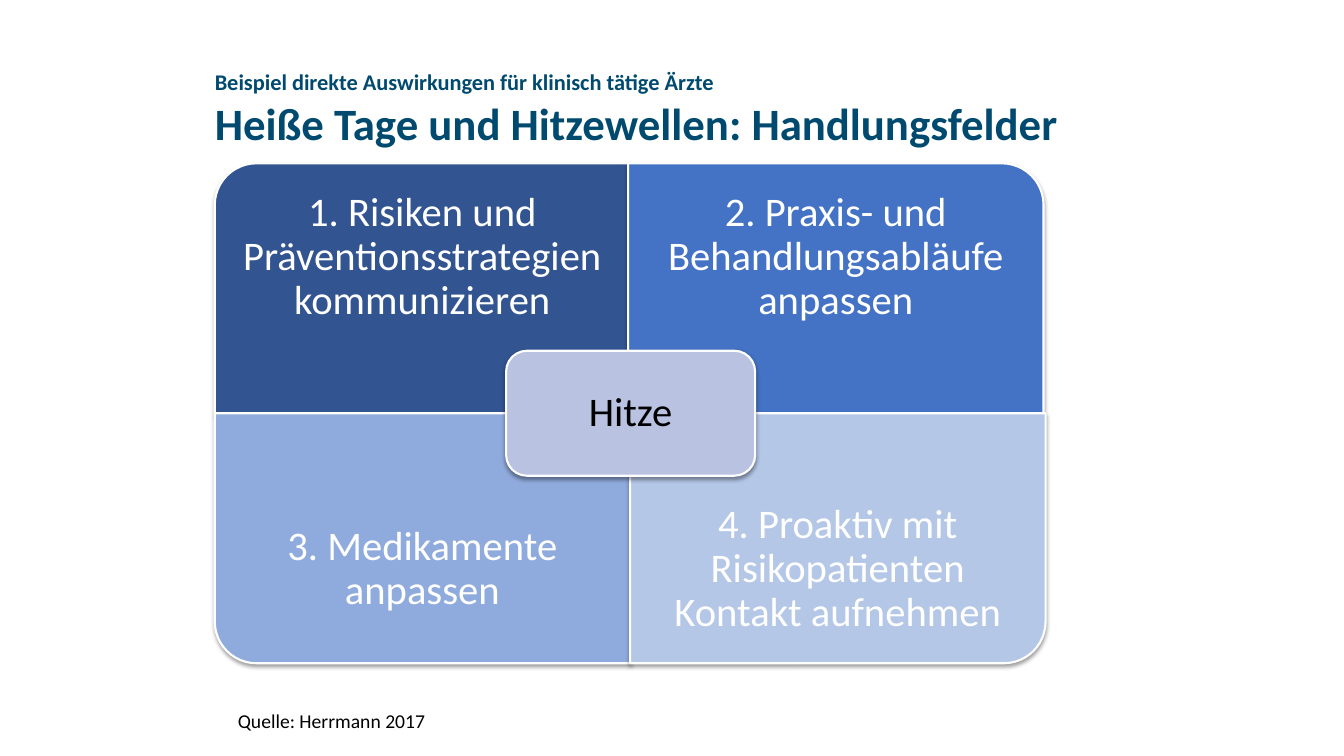
from lxml.etree import SubElement
from pptx import Presentation
from pptx.dml.color import RGBColor
from pptx.enum.shapes import MSO_SHAPE as Shape
from pptx.enum.text import MSO_ANCHOR as Anchor, MSO_AUTO_SIZE as Fit, PP_ALIGN as Align
from pptx.oxml.ns import qn
from pptx.util import Inches, Pt

COLORS = {
    "title": "004A6F", "white": "FFFFFF", "black": "000000", "center": "B9C2E1",
    "risks": "325491", "practice": "4472C4", "medication": "8FAADC", "contact": "B4C7E7",
}
LEFT, TOP = 2.13, 1.62      # corner of the matrix
COL, ROW = 4.12, 2.48       # size of one quadrant
TEXT_H = ROW * 0.75         # part of a quadrant left free by the center


def write(box, lines, color, inset=0.0, align=Align.LEFT, anchor=Anchor.TOP,
          bold=False, spacing=1.0, fit=Fit.NONE):
    """Fill a box with (text, size) lines, one paragraph each."""
    frame = box.text_frame
    frame.word_wrap, frame.auto_size, frame.vertical_anchor = True, fit, anchor
    frame.margin_left = frame.margin_right = Inches(inset)
    frame.margin_top = frame.margin_bottom = Inches(min(inset, 0.23))
    for index, (text, size) in enumerate(lines):
        para = frame.add_paragraph() if index else frame.paragraphs[0]
        para.alignment, para.line_spacing = align, spacing
        span = para.add_run()
        span.text = text
        span.font.name, span.font.size, span.font.bold = "Calibri", Pt(size), bold
        span.font.color.rgb = RGBColor.from_string(COLORS[color])


def add_panel(kind, left, top, width, height, color, rotation=0):
    """Add a filled panel with a white outline and a soft shadow below it."""
    panel = page.shapes.add_shape(kind, *map(Inches, (left, top, width, height)))
    panel.rotation = rotation
    panel.fill.solid()
    panel.fill.fore_color.rgb = RGBColor.from_string(COLORS[color])
    panel.line.color.rgb = RGBColor.from_string(COLORS["white"])
    panel.line.width = Pt(1.5)
    panel.shadow.inherit = False
    effects = panel._element.spPr.find(qn("a:effectLst"))
    shadow = SubElement(effects, qn("a:outerShdw"), blurRad=str(Pt(3.1)),
                        dist=str(Pt(1.6)), dir="5400000", rotWithShape="0")
    tone = SubElement(shadow, qn("a:srgbClr"), val=COLORS["black"])
    SubElement(tone, qn("a:alpha"), val="38000")


deck = Presentation()
deck.slide_width, deck.slide_height = Inches(13.33), Inches(7.5)
page = deck.slides.add_slide(deck.slide_layouts[5])

# Title with its kicker line
title = page.shapes.title
title.left, title.top, title.width, title.height = map(Inches, (LEFT, 0.68, 8.74, 0.81))
write(title, [("Beispiel direkte Auswirkungen für klinisch tätige Ärzte", 16),
              ("Heiße Tage und Hitzewellen: Handlungsfelder", 32)],
      "title", bold=True, fit=Fit.SHAPE_TO_FIT_TEXT)

# Quadrants: left edge, row, rotation of the rounded corner, color, text
quadrants = [
    (LEFT, 0, 270, "risks", "1. Risiken und Präventionsstrategien kommunizieren"),
    (6.23, 0, 0, "practice", "2. Praxis- und Behandlungsabläufe anpassen"),
    (LEFT, 1, 180, "medication", "3. Medikamente anpassen"),
    (LEFT + COL, 1, 90, "contact", "4. Proaktiv mit Risikopatienten Kontakt aufnehmen"),
]
for left, row, rotation, color, text in quadrants:
    top = TOP + row * ROW
    # A quarter turn swaps the sides around the same middle
    width, height = (ROW, COL) if rotation % 180 else (COL, ROW)
    add_panel(Shape.ROUND_1_RECTANGLE, left + (COL - width) / 2, top + (ROW - height) / 2,
              width, height, color, rotation)
    text_top = top + row * (ROW - TEXT_H)
    box = page.shapes.add_textbox(*map(Inches, (left, text_top, COL, TEXT_H)))
    write(box, [(text, 29)], "white", inset=0.23, align=Align.CENTER,
          anchor=Anchor.MIDDLE, spacing=0.9)

# Center, half a row high
center_w, center_h, pad = 2.47, ROW / 2, 0.06
center_left, center_top = 5.02, TOP + TEXT_H
add_panel(Shape.ROUNDED_RECTANGLE, center_left, center_top, center_w, center_h, "center")
box = page.shapes.add_textbox(*map(Inches, (center_left + pad, center_top + pad,
                                            center_w - 2 * pad, center_h - 2 * pad)))
write(box, [("Hitze", 29)], "black", inset=0.12, align=Align.CENTER,
      anchor=Anchor.MIDDLE, spacing=0.9)

# Source
source = page.shapes.add_textbox(*map(Inches, (2.26, 6.98, 6.71, 0.34)))
write(source, [("Quelle: Herrmann 2017", 14)], "black", inset=0.1, fit=Fit.SHAPE_TO_FIT_TEXT)
source.text_frame.margin_top = source.text_frame.margin_bottom = Inches(0.05)

deck.save("out.pptx")
